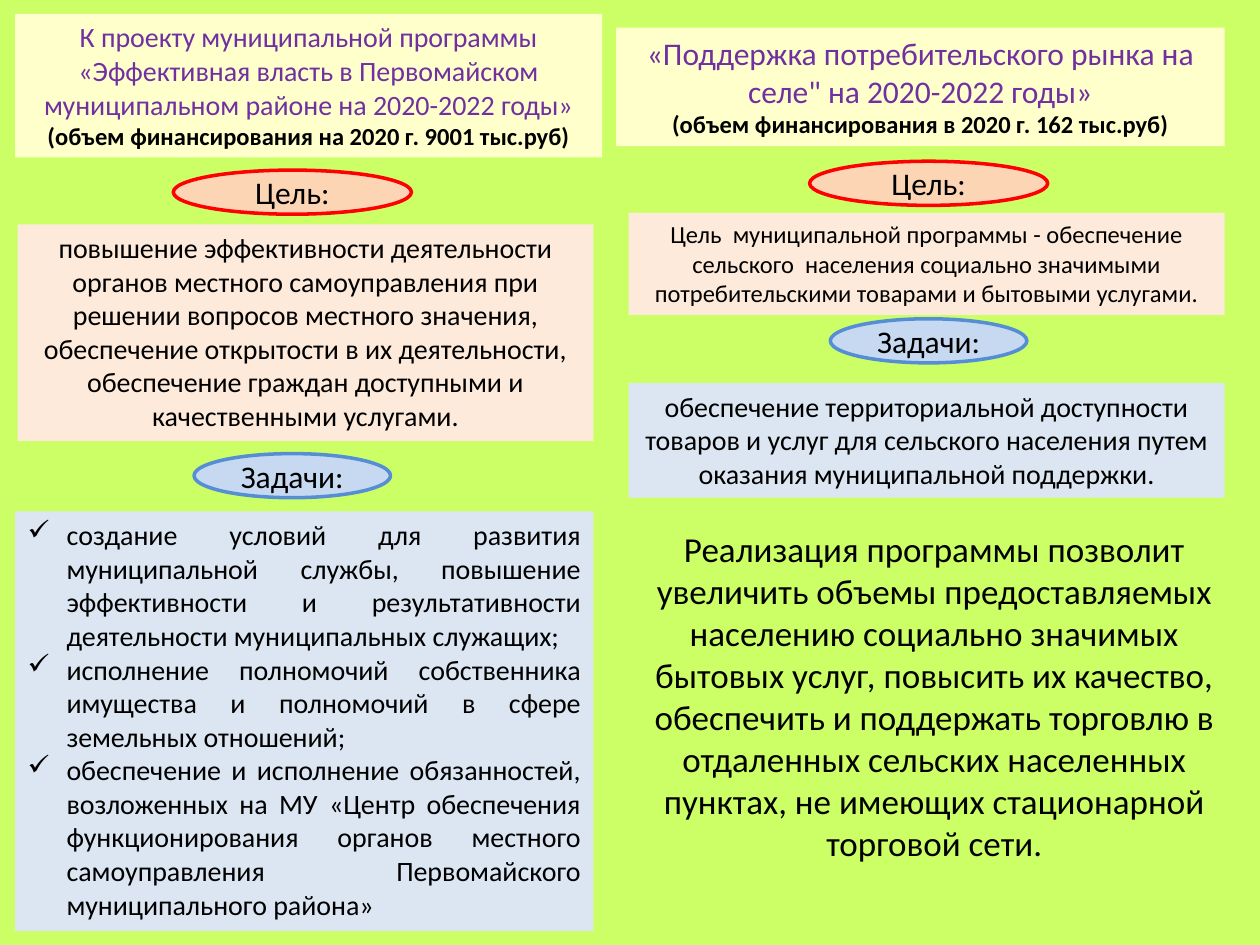
from lxml.etree import SubElement
from pptx import Presentation
from pptx.dml.color import RGBColor
from pptx.enum.shapes import MSO_SHAPE as Shape
from pptx.enum.text import MSO_ANCHOR as Anchor, MSO_AUTO_SIZE as Fit, PP_ALIGN as Align
from pptx.oxml.ns import qn
from pptx.util import Inches, Pt

CREAM, PEACH, PALE = "FFFFCC", "FDEADA", "DCE6F2"
PURPLE, BLACK = "7030A0", "000000"


def rgb(code):
    return RGBColor.from_string(code)


class Page:
    font = "Calibri"

    def __init__(self, slide, back):
        self.slide = slide
        fill = slide.background.fill
        fill.solid()
        fill.fore_color.rgb = rgb(back)

    def label(self, frame, text, size, color=BLACK, bold=False, align=Align.CENTER):
        """Fill the frame, one paragraph for each line of text."""
        frame.word_wrap = True
        for line in text.split("\n"):
            para = frame.paragraphs[0]
            if para.runs:
                para = frame.add_paragraph()
            para.text = line
            para.alignment = align
            font = para.font
            font.name, font.size, font.bold = self.font, Pt(size), bold
            font.color.rgb = rgb(color)

    def shape(self, kind, at, fill):
        item = self.slide.shapes.add_shape(kind, *map(Inches, at))
        item.shadow.inherit = False
        item.fill.solid()
        item.fill.fore_color.rgb = rgb(fill)
        item.line.fill.background()
        return item

    def box(self, at, fill, text, size, **style):
        frame = self.shape(Shape.RECTANGLE, at, fill).text_frame
        frame.vertical_anchor = Anchor.TOP
        frame.auto_size = Fit.SHAPE_TO_FIT_TEXT
        self.label(frame, text, size, **style)
        return frame

    def title(self, at, text, size, funds):
        frame = self.box(at, CREAM, text, size, color=PURPLE)
        self.label(frame, funds, 14, bold=True)

    def checks(self, at, fill, text, size):
        """Add a box whose paragraphs carry tick marks."""
        frame = self.box(at, fill, text, size, align=Align.JUSTIFY)
        for para in frame.paragraphs:
            props = para._p.get_or_add_pPr()
            props.set("marL", str(Inches(0.31)))
            props.set("indent", str(Inches(-0.31)))
            # The bullet must come before the default run style.
            mark = SubElement(props, qn("a:buChar"), char="✓")
            props.insert(0, mark)

    def oval(self, mid, top, wide, text, fill, line):
        """Add a heading oval centred on mid."""
        item = self.shape(Shape.OVAL, (mid - wide / 2, top, wide, 0.35), fill)
        item.line.color.rgb = rgb(line)
        item.line.width = Pt(2)
        item.text_frame.vertical_anchor = Anchor.MIDDLE
        self.label(item.text_frame, text, 18)

    def heads(self, mid, goal, tasks):
        """Add the goal and task ovals of one column."""
        self.oval(mid, goal, 1.89, "Цель:", "FCD5B5", "FF0000")
        self.oval(mid, tasks, 1.56, "Задачи:", "C6D9F1", "558ED5")

    def note(self, at, text, size):
        frame = self.slide.shapes.add_textbox(*map(Inches, at)).text_frame
        frame.auto_size = Fit.SHAPE_TO_FIT_TEXT
        self.label(frame, text, size)


def market(page):
    left, wide = 4.99, 4.73
    page.title((4.89, 0.22, 4.83, 0.94),
               "«Поддержка потребительского рынка на селе\" на 2020-2022 годы»", 18,
               "(объем финансирования в 2020 г. 162 тыс.руб)")
    page.heads(7.37, 1.28, 2.53)
    page.box((left, 1.69, wide, 0.81), PEACH,
             "Цель  муниципальной программы - обеспечение сельского  населения "
             "социально значимыми потребительскими товарами и бытовыми услугами.", 14)
    page.box((left, 3.04, wide, 0.91), PALE,
             "обеспечение территориальной доступности товаров и услуг для сельского "
             "населения путем оказания муниципальной поддержки.", 16)
    page.note((left, 4.14, 4.85, 2.79),
              "Реализация программы позволит увеличить объемы предоставляемых населению "
              "социально значимых бытовых услуг, повысить их качество, обеспечить и "
              "поддержать торговлю в отдаленных сельских населенных пунктах, не имеющих "
              "стационарной торговой сети.", 20)


def power(page):
    page.title((0.12, 0.11, 4.66, 1.14),
               "К проекту муниципальной программы\n"
               "«Эффективная власть в Первомайском муниципальном районе на 2020-2022 годы»",
               16, "(объем финансирования на 2020 г. 9001 тыс.руб)")
    page.box((0.14, 1.78, 4.57, 1.72), PEACH,
             "повышение эффективности деятельности органов местного самоуправления при "
             "решении вопросов местного значения, обеспечение открытости в их "
             "деятельности, обеспечение граждан доступными и качественными услугами.", 16)
    page.heads(2.32, 1.35, 3.6)
    page.checks((0.12, 4.06, 4.59, 3.33), PALE,
                "создание условий для развития муниципальной службы, повышение "
                "эффективности и результативности деятельности муниципальных служащих;\n"
                "исполнение полномочий собственника имущества и полномочий в сфере "
                "земельных отношений;\n"
                "обеспечение и исполнение обязанностей, возложенных на МУ «Центр "
                "обеспечения функционирования органов местного самоуправления "
                "Первомайского муниципального района»", 16)


def main():
    deck = Presentation()
    deck.slide_width, deck.slide_height = Inches(10), Inches(7.5)
    page = Page(deck.slides.add_slide(deck.slide_layouts[6]), "CCFF66")
    market(page)
    power(page)
    deck.save("out.pptx")


if __name__ == "__main__":
    main()
